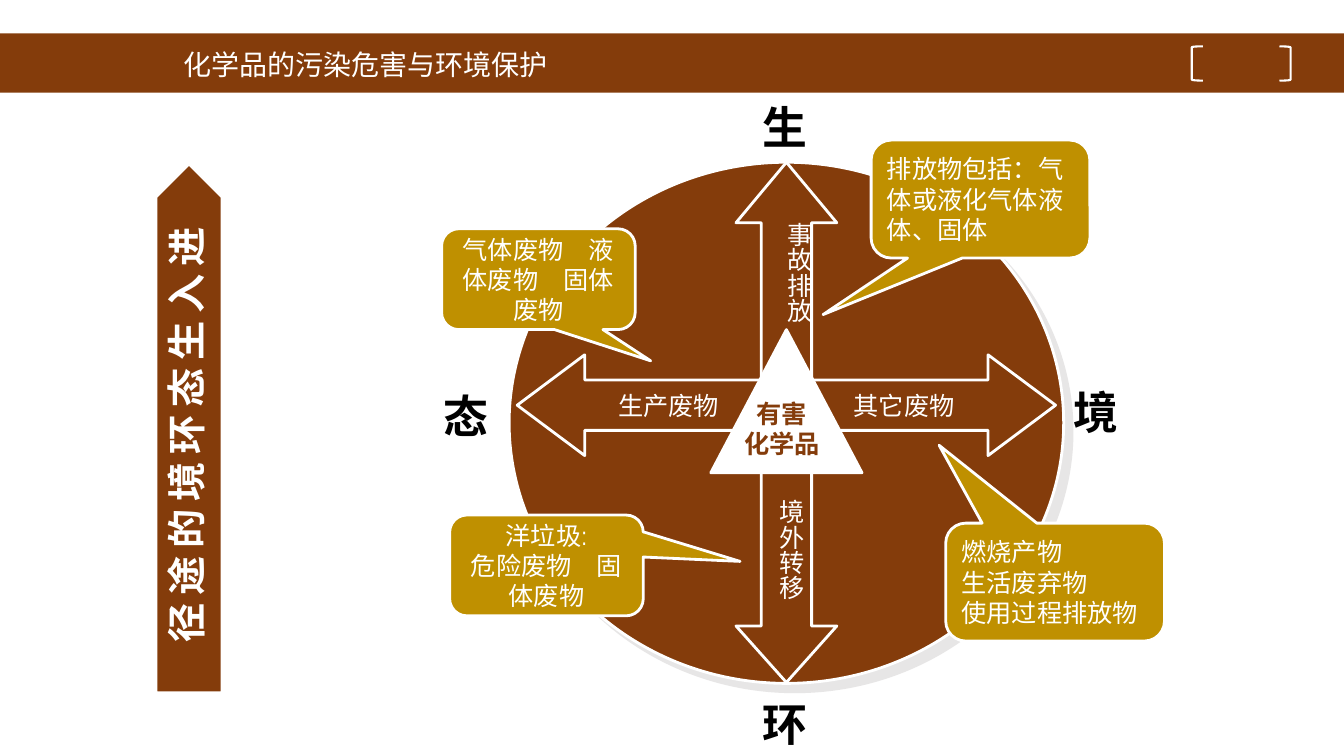
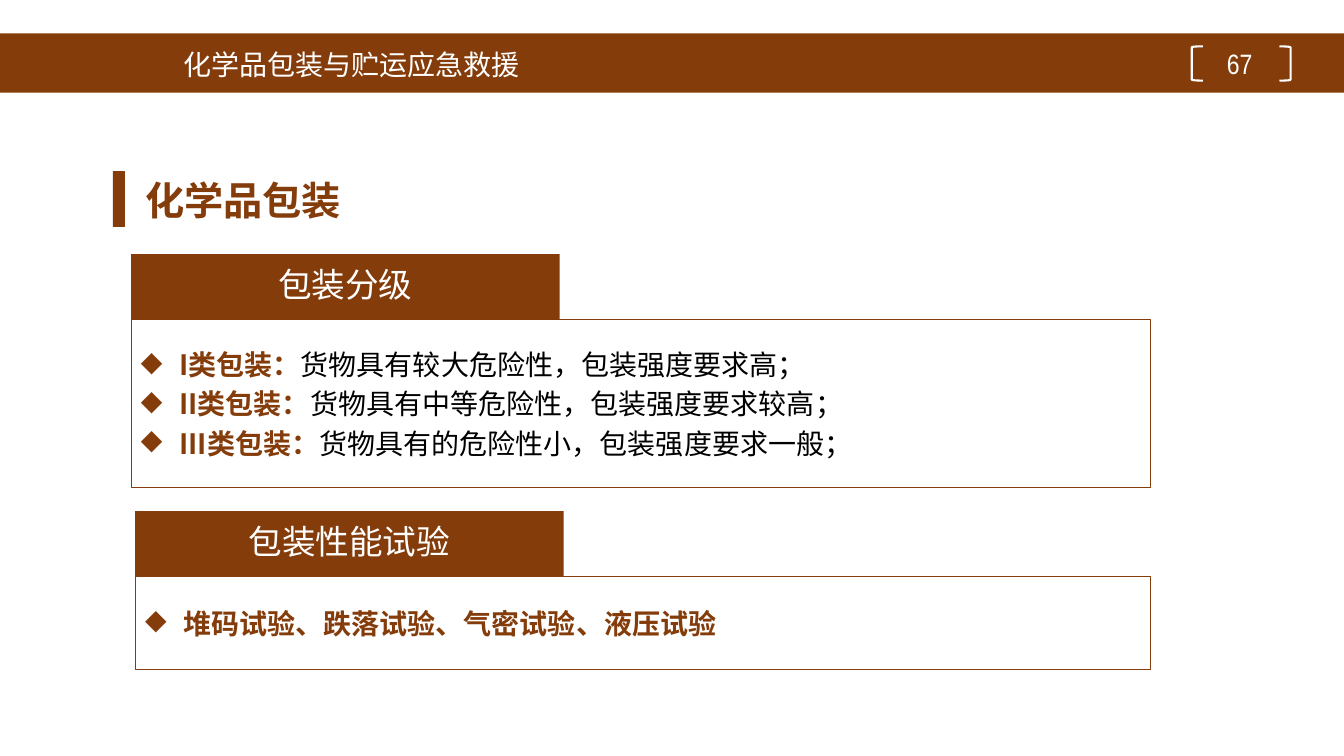
from dataclasses import dataclass
from typing import Optional

from lxml.etree import SubElement
from pptx import Presentation
from pptx.dml.color import RGBColor
from pptx.enum.shapes import MSO_SHAPE as Preset
from pptx.enum.text import MSO_ANCHOR as Anchor, PP_ALIGN as Align
from pptx.oxml.ns import qn
from pptx.util import Inches, Pt

BROWN = RGBColor(0x84, 0x3C, 0x0B)
GOLD = RGBColor(0xBF, 0x90, 0x00)
WHITE = RGBColor(0xFF, 0xFF, 0xFF)
BLACK = RGBColor(0x00, 0x00, 0x00)
SHADOW_GREY = "E7E6E6"

NARROW = "Arial Narrow"
SANS = "Noto Sans CJK SC"
SLIDE_WIDTH = 13.33
PANEL_RIGHT = 11.41
TAB_HEIGHT = 0.65


@dataclass(frozen=True)
class Box:
    left: float
    top: float
    width: float
    height: float

    def lengths(self) -> tuple:
        return tuple(Inches(v) for v in (self.left, self.top, self.width, self.height))


@dataclass(frozen=True)
class Style:
    size: float
    color: RGBColor = WHITE
    bold: bool = False
    font: str = NARROW
    align: Align = Align.CENTER
    anchor: Anchor = Anchor.MIDDLE
    wrap: bool = True
    vertical: bool = False
    line_spacing: Optional[float] = None


@dataclass(frozen=True)
class Callout:
    box: Box
    tip: tuple
    lines: tuple
    align: Align = Align.CENTER


@dataclass(frozen=True)
class Arrow:
    preset: Preset
    box: Box
    head: float
    label: str
    label_box: Optional[Box] = None


@dataclass(frozen=True)
class Panel:
    left: float
    top: float
    height: float
    heading: str
    items: tuple


TITLE = Style(20, align=Align.LEFT, line_spacing=0.9)
PAGE_NUMBER = Style(20)
COMPASS = Style(32, BLACK, True, anchor=Anchor.TOP, wrap=False)
LABEL = Style(18, wrap=False)
VERTICAL_LABEL = Style(18, anchor=Anchor.TOP, vertical=True)
CENTRE = Style(18, BROWN, True, anchor=Anchor.TOP)
BANNER = Style(28, bold=True, vertical=True)
SECTION = Style(28, BROWN, True, SANS, Align.LEFT, Anchor.TOP)
TAB = Style(24, font=SANS, line_spacing=0.9)
ITEM = Style(20, BROWN, True, SANS, Align.LEFT)
ITEM_DETAIL = Style(20, BLACK, False, SANS, Align.LEFT)

COMPASS_WORDS = (("生", 7.46, 0.94), ("态", 4.29, 3.81), ("环", 7.46, 6.86), ("境", 10.54, 3.77))

ARROWS = (
    Arrow(Preset.RIGHT_ARROW, Box(7.8, 3.52, 2.67, 1), 0.67, "其它废物"),
    Arrow(Preset.LEFT_ARROW, Box(5.13, 3.52, 2.67, 1), 0.67, "生产废物"),
    Arrow(Preset.UP_ARROW, Box(7.3, 1.61, 1, 2.42), 0.6, "事故排放", Box(7.62, 2.11, 0.51, 1.25)),
    Arrow(Preset.DOWN_ARROW, Box(7.3, 4.52, 1, 2.25), 0.56, "境外转移", Box(7.54, 4.86, 0.51, 1.5)),
)

CALLOUTS = (
    Callout(Box(4.46, 5.11, 1.92, 1), (1, -0.04), ("洋垃圾:", "危险废物　固体废物")),
    Callout(Box(9.38, 5.19, 2.17, 1.17), (-0.53, -1.16),
            ("燃烧产物", "生活废弃物", "使用过程排放物"), Align.LEFT),
    Callout(Box(8.64, 1.39, 2.17, 1.17), (-0.72, 0.98),
            ("排放物包括：气体或液化气体液体、固体",), Align.LEFT),
    Callout(Box(4.38, 2.27, 1.92, 1), (0.58, 0.81), ("气体废物　液体废物　固体废物",)),
)

PANELS = (
    Panel(1.3, 2.52, 1.67, "包装分级", (
        ("I类包装：", "货物具有较大危险性，包装强度要求高；"),
        ("II类包装：", "货物具有中等危险性，包装强度要求较高；"),
        ("III类包装：", "货物具有的危险性小，包装强度要求一般；"),
    )),
    Panel(1.34, 5.07, 0.92, "包装性能试验", (("堆码试验、跌落试验、气密试验、液压试验",),)),
)


def format_run(run, style: Style) -> None:
    font = run.font
    font.size = Pt(style.size)
    font.bold = style.bold
    font.color.rgb = style.color
    font.name = style.font
    SubElement(font._element, qn("a:ea")).set("typeface", SANS)


def prepare_frame(shape, style: Style):
    frame = shape.text_frame
    frame.word_wrap = style.wrap
    frame.vertical_anchor = style.anchor
    if style.vertical:
        frame._txBody.bodyPr.set("vert", "eaVert")
    return frame


def write(shape, style: Style, *lines: str) -> None:
    frame = prepare_frame(shape, style)
    frame.text = "\n".join(lines)
    for paragraph in frame.paragraphs:
        paragraph.alignment = style.align
        if style.line_spacing:
            paragraph.line_spacing = style.line_spacing
        for run in paragraph.runs:
            format_run(run, style)


def add_text(slide, box: Box, style: Style, *lines: str) -> None:
    write(slide.shapes.add_textbox(*box.lengths()), style, *lines)


def add_preset(slide, preset: Preset, box: Box, fill: Optional[RGBColor] = None,
               line: Optional[RGBColor] = None, weight: float = 2, adjustments: tuple = ()):
    shape = slide.shapes.add_shape(preset, *box.lengths())
    shape.shadow.inherit = False
    for index, value in enumerate(adjustments):
        shape.adjustments[index] = value
    if fill is None:
        shape.fill.background()
    else:
        shape.fill.solid()
        shape.fill.fore_color.rgb = fill
    if line is None:
        shape.line.fill.background()
    else:
        shape.line.color.rgb = line
        shape.line.width = Pt(weight)
    return shape


def add_offset_shadow(shape) -> None:
    effects = shape._element.spPr.find(qn("a:effectLst"))
    shadow = SubElement(effects, qn("a:outerShdw"), dist=str(Pt(8.5)), dir="2700000",
                        algn="ctr", rotWithShape="0")
    SubElement(shadow, qn("a:srgbClr")).set("val", SHADOW_GREY)


def add_diamond_bullet(paragraph) -> None:
    properties = paragraph._p.get_or_add_pPr()
    properties.set("marL", str(Inches(0.38)))
    properties.set("indent", str(Inches(-0.38)))
    color = SubElement(properties, qn("a:buClr"))
    SubElement(color, qn("a:srgbClr")).set("val", str(BROWN))
    SubElement(properties, qn("a:buChar")).set("char", "◆")


def add_framed_slide(presentation, title: str, page: str = ""):
    slide = presentation.slides.add_slide(presentation.slide_layouts[6])
    add_preset(slide, Preset.RECTANGLE, Box(0, 0.33, SLIDE_WIDTH, 0.59), BROWN)
    for left, rotation in ((11.82, 0), (12.69, 180)):
        bracket = add_preset(slide, Preset.LEFT_BRACKET, Box(left, 0.46, 0.11, 0.34),
                             line=WHITE, weight=1.5)
        bracket.rotation = rotation
    add_text(slide, Box(1.72, 0.43, 4.64, 0.45), TITLE, title)
    if page:
        add_text(slide, Box(11.97, 0.43, 0.65, 0.4), PAGE_NUMBER, page)
    return slide


def add_arrow(slide, arrow: Arrow) -> None:
    shape = add_preset(slide, arrow.preset, arrow.box, line=WHITE, adjustments=(0.5, arrow.head))
    if arrow.label_box:
        add_text(slide, arrow.label_box, VERTICAL_LABEL, arrow.label)
    else:
        write(shape, LABEL, arrow.label)


def add_callout(slide, callout: Callout) -> None:
    shape = add_preset(slide, Preset.ROUNDED_RECTANGULAR_CALLOUT, callout.box, GOLD, WHITE,
                       adjustments=(*callout.tip, 0.17))
    write(shape, Style(18, align=callout.align), *callout.lines)


def add_panel(slide, panel: Panel) -> None:
    body = Box(panel.left, panel.top + TAB_HEIGHT, PANEL_RIGHT - panel.left, panel.height)
    frame = prepare_frame(add_preset(slide, Preset.RECTANGLE, body, line=BROWN, weight=0.75), ITEM)
    for index, item in enumerate(panel.items):
        paragraph = frame.add_paragraph() if index else frame.paragraphs[0]
        paragraph.alignment = ITEM.align
        paragraph.space_before = Pt(4 if index else 0)
        add_diamond_bullet(paragraph)
        for text, style in zip(item, (ITEM, ITEM_DETAIL)):
            run = paragraph.add_run()
            run.text = text
            format_run(run, style)
    tab = add_preset(slide, Preset.RECTANGLE, Box(panel.left, panel.top, 4.25, TAB_HEIGHT), BROWN)
    write(tab, TAB, panel.heading)


def build_pathways(presentation) -> None:
    slide = add_framed_slide(presentation, "化学品的污染危害与环境保护")
    for word, left, top in COMPASS_WORDS:
        add_text(slide, Box(left, top, 0.66, 0.64), COMPASS, word)
    add_offset_shadow(add_preset(slide, Preset.OVAL, Box(5.05, 1.61, 5.5, 5.17), BROWN, WHITE))
    for arrow in ARROWS:
        add_arrow(slide, arrow)
    add_preset(slide, Preset.ISOSCELES_TRIANGLE, Box(7.05, 3.27, 1.5, 1.42), WHITE, WHITE)
    add_text(slide, Box(7.17, 3.9, 1.17, 0.71), CENTRE, "有害", "化学品")
    for callout in CALLOUTS:
        add_callout(slide, callout)
    banner = add_preset(slide, Preset.PENTAGON, Box(-0.74, 3.93, 5.23, 0.64), BROWN, WHITE, 1)
    banner.rotation = 270
    write(banner, BANNER, "进入生态环境的途径")


def build_packaging(presentation) -> None:
    slide = add_framed_slide(presentation, "化学品包装与贮运应急救援", "67")
    add_text(slide, Box(1.34, 1.7, 4.73, 0.57), SECTION, "化学品包装")
    add_preset(slide, Preset.RECTANGLE, Box(1.12, 1.7, 0.11, 0.55), BROWN, BROWN, 0.5)
    for panel in PANELS:
        add_panel(slide, panel)


def main() -> None:
    presentation = Presentation()
    presentation.slide_width = Inches(SLIDE_WIDTH)
    presentation.slide_height = Inches(7.5)
    build_pathways(presentation)
    build_packaging(presentation)
    presentation.save("out.pptx")


if __name__ == "__main__":
    main()
